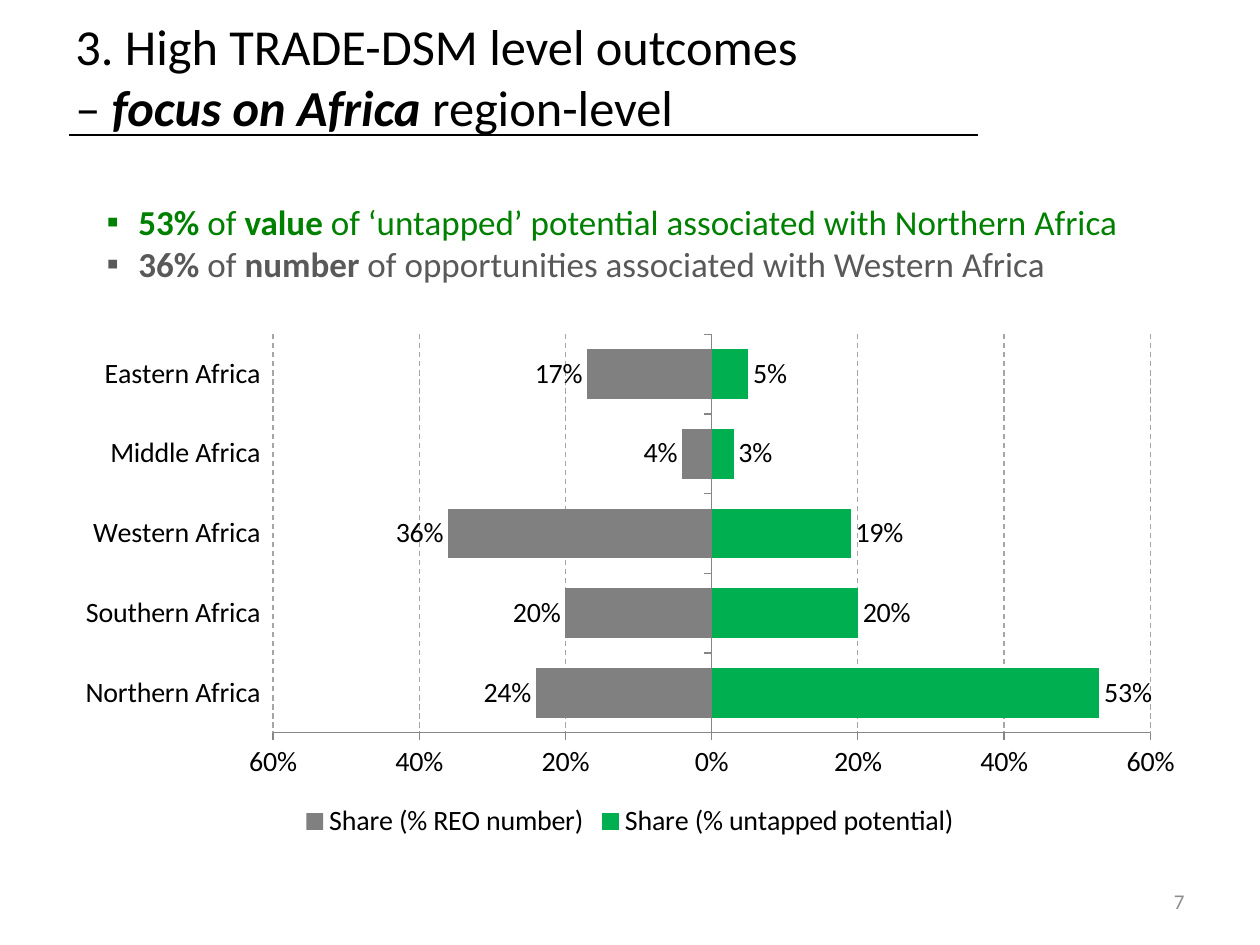
from dataclasses import dataclass

from lxml.etree import SubElement
from pptx import Presentation
from pptx.chart.data import CategoryChartData
from pptx.dml.color import RGBColor
from pptx.enum.chart import XL_CHART_TYPE as ChartType
from pptx.enum.chart import XL_LABEL_POSITION as LabelPosition
from pptx.enum.chart import XL_LEGEND_POSITION as LegendPosition
from pptx.enum.chart import XL_TICK_LABEL_POSITION as TickLabels
from pptx.enum.chart import XL_TICK_MARK as TickMark
from pptx.enum.dml import MSO_LINE_DASH_STYLE as Dash
from pptx.enum.shapes import MSO_CONNECTOR as Connector
from pptx.enum.text import MSO_ANCHOR as Anchor
from pptx.enum.text import PP_ALIGN as Align
from pptx.oxml.ns import qn
from pptx.util import Cm, Pt

FONT = "Calibri"
BLACK = "000000"
LEFT, WIDTH = 1.27, 22.86


@dataclass
class Span:
    text: str
    bold: bool = False
    italic: bool = False


@dataclass
class Line:
    spans: list[Span]
    size: float
    color: str
    bullet: str = ""
    align: Align = Align.LEFT


@dataclass
class Share:
    name: str
    values: list[float]
    color: str
    label_format: str


def rgb(value: str) -> RGBColor:
    return RGBColor.from_string(value)


def apply(target, formats: dict) -> None:
    for name, value in formats.items():
        setattr(target, name, value)


def add_bullet(paragraph, mark: str) -> None:
    properties = paragraph._p.get_or_add_pPr()
    properties.set("marL", str(Cm(1.27)))
    properties.set("indent", str(Cm(-0.64)))
    SubElement(properties, qn("a:buFont"), typeface="Arial")
    SubElement(properties, qn("a:buChar"), char=mark)


def add_text(slide, box: tuple, lines: list[Line], anchor: Anchor) -> None:
    frame = slide.shapes.add_textbox(*map(Cm, box)).text_frame
    apply(frame, {"word_wrap": True, "vertical_anchor": anchor})
    for index, line in enumerate(lines):
        paragraph = frame.add_paragraph() if index else frame.paragraphs[0]
        paragraph.alignment = line.align
        if line.bullet:
            add_bullet(paragraph, line.bullet)
        for span in line.spans:
            for part, piece in enumerate(span.text.split("\v")):
                if part:
                    paragraph.add_line_break()
                run = paragraph.add_run()
                run.text = piece
                apply(run.font, {"name": FONT, "size": Pt(line.size),
                                 "bold": span.bold, "italic": span.italic})
                run.font.color.rgb = rgb(line.color)


def add_rule(slide, start: float, end: float, height: float) -> None:
    rule = slide.shapes.add_connector(
        Connector.STRAIGHT, Cm(start), Cm(height), Cm(end), Cm(height))
    rule.line.color.rgb = rgb(BLACK)
    rule.line.width = Pt(0.75)
    SubElement(rule._element.spPr, qn("a:effectLst"))


def add_share_chart(slide, box: tuple, regions: list[str],
                    shares: list[Share]) -> None:
    data = CategoryChartData()
    data.categories = regions
    for share in shares:
        data.add_series(share.name, share.values)
    chart = slide.shapes.add_chart(
        ChartType.BAR_CLUSTERED, *map(Cm, box), data).chart
    apply(chart, {"has_title": False, "has_legend": True})
    apply(chart.font, {"name": FONT, "size": Pt(16)})
    chart.font.color.rgb = rgb(BLACK)
    apply(chart.legend, {"position": LegendPosition.BOTTOM,
                         "include_in_layout": False})

    bars = chart.plots[0]
    apply(bars, {"gap_width": 61, "overlap": 100, "vary_by_categories": False})
    for series, share in zip(bars.series, shares):
        series.invert_if_negative = False
        series.format.fill.solid()
        series.format.fill.fore_color.rgb = rgb(share.color)
        apply(series.data_labels, {
            "show_value": True, "number_format": share.label_format,
            "number_format_is_linked": False,
            "position": LabelPosition.OUTSIDE_END})

    region_axis, share_axis = chart.category_axis, chart.value_axis
    for axis in (region_axis, share_axis):
        axis.major_tick_mark = TickMark.OUTSIDE
        axis.format.line.color.rgb = rgb("868686")
        axis.format.line.width = Pt(0.75)
    region_axis.tick_label_position = TickLabels.LOW
    apply(share_axis, {"minimum_scale": -0.6, "maximum_scale": 0.6,
                       "major_unit": 0.2, "has_major_gridlines": True})
    apply(share_axis.tick_labels, {"number_format": "0%;0%",
                                   "number_format_is_linked": False})
    grid = share_axis.major_gridlines.format.line
    grid.color.rgb = rgb("A6A6A6")
    apply(grid, {"width": Pt(0.75), "dash_style": Dash.DASH})


def main() -> None:
    deck = Presentation()
    apply(deck, {"slide_width": Cm(25.4), "slide_height": Cm(19.05)})
    slide = deck.slides.add_slide(deck.slide_layouts[6])

    title = Line([Span("3. High TRADE-DSM level outcomes\v– "),
                  Span("focus on Africa ", bold=True, italic=True),
                  Span("region-level")], 28.8, BLACK)
    findings = [
        Line([Span(f"{percent} ", bold=True), Span("of "),
              Span(measure, bold=True), Span(f" of {rest}")], 20, color, "▪")
        for percent, measure, rest, color in (
            ("53%", "value",
             "‘untapped’ potential associated with Northern Africa", "008000"),
            ("36%", "number",
             "opportunities associated with Western Africa", "595959"))]
    page = Line([Span("7")], 12, "8C8C8C", align=Align.RIGHT)

    regions = [f"{part} Africa" for part in
               ("Northern", "Southern", "Western", "Middle", "Eastern")]
    shares = [
        Share("Share (% untapped potential)",
              [0.53, 0.2, 0.19, 0.03, 0.05], "00B050", "0%"),
        Share("Share (% REO number)",
              [-0.24, -0.2, -0.36, -0.04, -0.17], "808080", "0%;0%")]

    add_rule(slide, 1.4, 19.71, 2.72)
    add_text(slide, (LEFT, 0.33, WIDTH, 2.39), [title], Anchor.MIDDLE)
    add_share_chart(slide, (LEFT, 6.53, WIDTH, 10.49), regions, shares)
    add_text(slide, (LEFT, 3.92, WIDTH, 1.92), findings, Anchor.TOP)
    add_text(slide, (18.21, 17.65, 5.92, 1.02), [page], Anchor.MIDDLE)
    deck.save("out.pptx")


if __name__ == "__main__":
    main()
